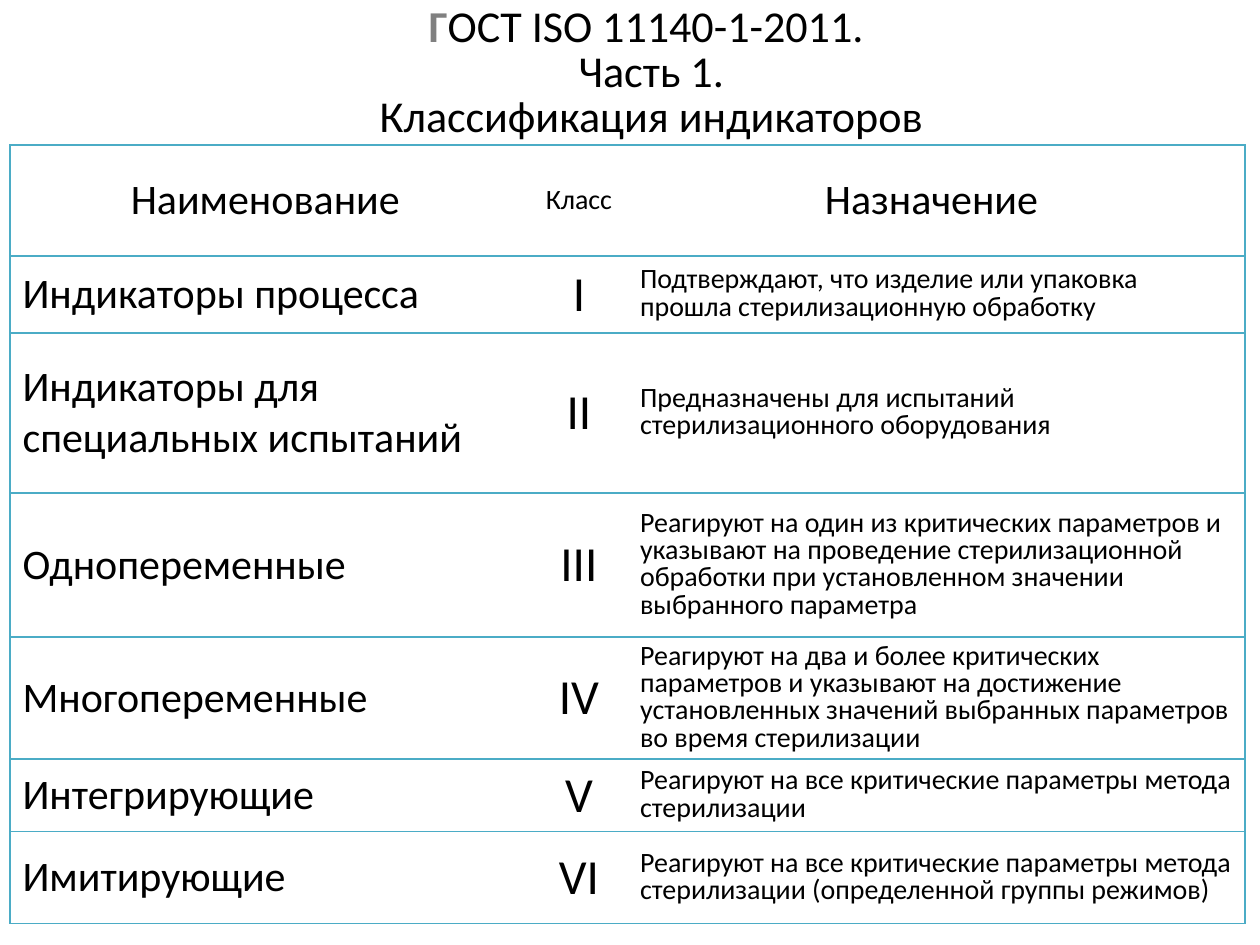
from pptx import Presentation
from pptx.dml.color import RGBColor
from pptx.enum import text
from pptx.oxml import parse_xml
from pptx.oxml import ns
from pptx.util import Cm, Pt

HUES = {"back": "FFFFFF", "ink": "000000", "mark": "808080", "rule": "4BACC6"}
FACE = "Calibri"
MID, LEFT = text.PP_ALIGN.CENTER, text.PP_ALIGN.LEFT

HEAD = ["ОСТ ISO 11140-1-2011. ", "Часть 1.", "Классификация индикаторов"]
COLS = [10.49, 1.96, 12.45]
ROWS = [
    (2.24, "Наименование ", "Класс", "Назначение "),
    (1.55, "Индикаторы процесса", "I",
     "Подтверждают, что изделие или упаковка прошла стерилизационную обработку"),
    (3.23, "Индикаторы для специальных испытаний", "II",
     "Предназначены для испытаний стерилизационного оборудования"),
    (2.9, "Однопеременные", "III",
     "Реагируют на один из критических параметров и указывают на проведение "
     "стерилизационной обработки при установленном значении выбранного параметра"),
    (2.42, "Многопеременные", "IV",
     "Реагируют на два и более критических параметров и указывают на достижение "
     "установленных значений выбранных параметров во время стерилизации"),
    (1.43, "Интегрирующие", "V",
     "Реагируют на все критические параметры метода стерилизации"),
    (1.85, "Имитирующие", "VI",
     "Реагируют на все критические параметры метода стерилизации "
     "(определенной группы режимов)"),
]
# Size, alignment and line spacing of each column
TOPS = [(24, MID, 1), (16, MID, 1), (24, MID, 1)]
BODY = [(24, LEFT, 1), (28, MID, 1), (16, LEFT, 0.8)]


def hue(name):
    return RGBColor.from_string(HUES[name])


def style(para, size, align, space):
    para.alignment = align
    para.line_spacing = space
    para.space_before = Pt(0)
    font = para.font
    font.name, font.size, font.bold = FACE, Pt(size), False
    font.color.rgb = hue("ink")


def title(shape, x, y, w, h):
    shape.left, shape.top, shape.width, shape.height = map(Cm, (x, y, w, h))
    frame = shape.text_frame
    frame.word_wrap = True
    frame.auto_size = text.MSO_AUTO_SIZE.NONE
    frame.vertical_anchor = text.MSO_ANCHOR.MIDDLE
    para = frame.paragraphs[0]
    style(para, 25.2, MID, 0.85)
    mark = para.add_run()
    mark.text = "Г"
    mark.font.bold = True
    mark.font.color.rgb = hue("mark")
    for i, line in enumerate(HEAD):
        if i:
            para.add_line_break()
        para.add_run().text = line


def edge(cell, sides):
    """Draw the named sides of a cell and clear the others."""
    props = cell._tc.get_or_add_tcPr()
    for i, side in enumerate("LRTB"):
        fill = (f'<a:solidFill><a:srgbClr val="{HUES["rule"]}"/></a:solidFill>'
                if side in sides else "<a:noFill/>")
        props.insert(i, parse_xml(
            f'<a:ln{side} {ns.nsdecls("a")} w="{Pt(1)}">{fill}</a:ln{side}>'))


def grid(slide, x, y):
    high = sum(row[0] for row in ROWS)
    box = map(Cm, (x, y, sum(COLS), high))
    table = slide.shapes.add_table(len(ROWS), len(COLS), *box).table
    table.first_row = table.horz_banding = False
    for col, wide in zip(table.columns, COLS):
        col.width = Cm(wide)
    for r, (tall, *words) in enumerate(ROWS):
        table.rows[r].height = Cm(tall)
        for c, (word, look) in enumerate(zip(words, BODY if r else TOPS)):
            cell = table.cell(r, c)
            cell.text = word
            cell.vertical_anchor = text.MSO_ANCHOR.MIDDLE
            cell.fill.solid()
            cell.fill.fore_color.rgb = hue("back")
            style(cell.text_frame.paragraphs[0], *look)
            edge(cell, ("LTB", "TB", "RTB")[c])


def main():
    deck = Presentation()
    deck.slide_width, deck.slide_height = Cm(25.4), Cm(19.05)
    slide = deck.slides.add_slide(deck.slide_layouts[5])
    slide.background.fill.solid()
    slide.background.fill.fore_color.rgb = hue("back")
    title(slide.shapes.title, 1.7, 0, 22.86, 2.97)
    grid(slide, 0.2, 2.92)
    deck.save("out.pptx")


if __name__ == "__main__":
    main()
